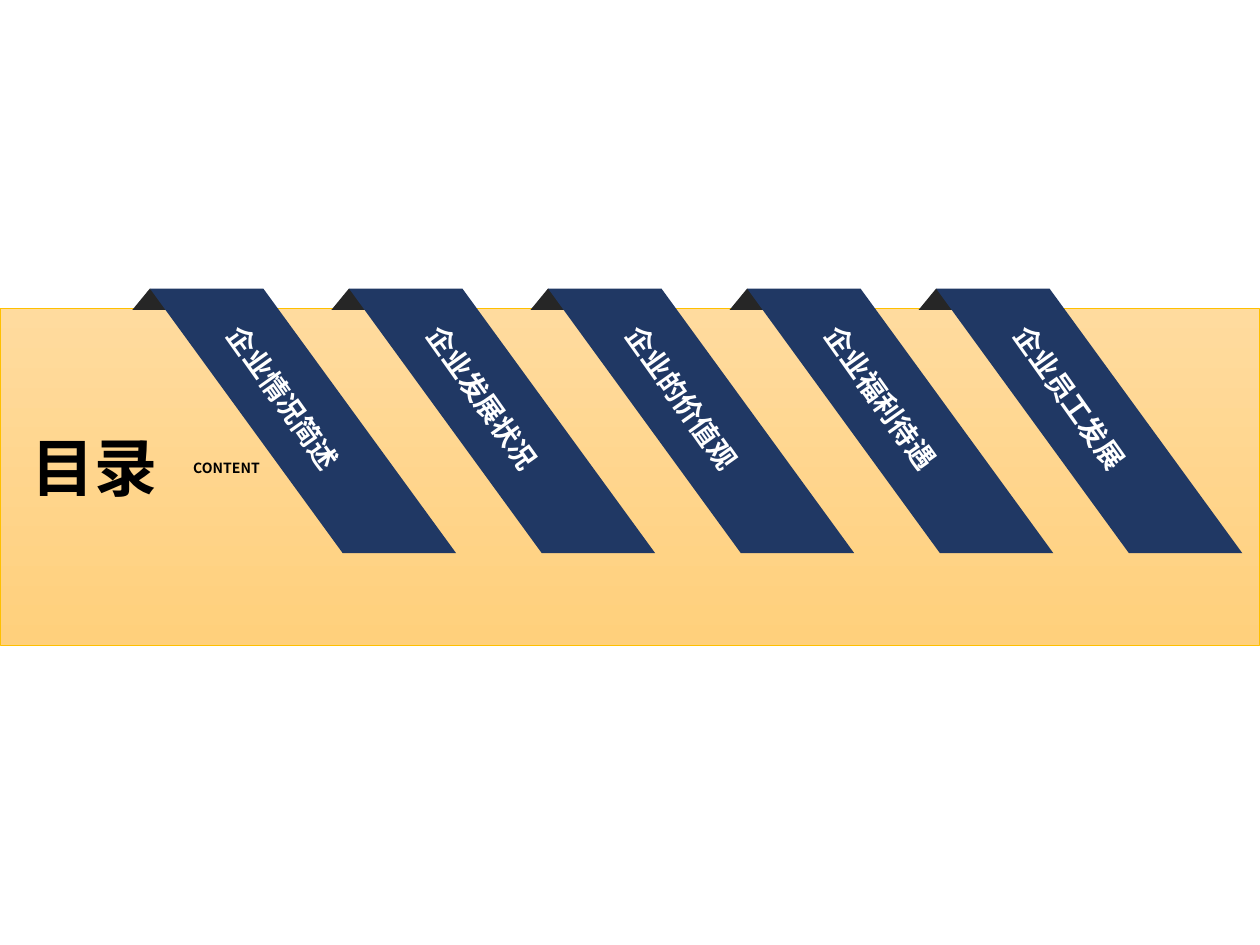
from lxml.etree import SubElement
from pptx import Presentation
from pptx.dml.color import RGBColor
from pptx.enum.shapes import MSO_SHAPE
from pptx.enum.text import MSO_ANCHOR, MSO_AUTO_SIZE, PP_ALIGN
from pptx.oxml.ns import qn
from pptx.util import Inches, Pt

FONT = "Noto Sans CJK SC"
BLACK = RGBColor(0, 0, 0)
WHITE = RGBColor(0xFF, 0xFF, 0xFF)
NAVY = RGBColor(0x20, 0x38, 0x64)
CHARCOAL = RGBColor(0x26, 0x26, 0x26)
GOLD = RGBColor(0xFF, 0xC0, 0x00)
BAND_TOP = RGBColor(0xFF, 0xDB, 0x9E)
BAND_BOTTOM = RGBColor(0xFF, 0xD0, 0x7C)

PAGE_WIDTH, PAGE_HEIGHT = 10, 7.5
BAND = (0, 2.45, PAGE_WIDTH, 2.67)
RIBBON_TOP, RIBBON_WIDTH, RIBBON_HEIGHT = 2.29, 2.57, 2.1
FIRST_RIBBON, RIBBON_STEP = 1.05, 1.58
LAST_RIBBON = 7.29
TOPICS = ["企业情况简述", "企业发展状况", "企业的价值观", "企业福利待遇", "企业员工发展"]


def write_text(shape, text, size, color, wrap=False):
    frame = shape.text_frame
    frame.word_wrap = wrap
    frame.auto_size = MSO_AUTO_SIZE.SHAPE_TO_FIT_TEXT
    frame.vertical_anchor = MSO_ANCHOR.TOP
    para = frame.paragraphs[0]
    para.alignment = PP_ALIGN.LEFT
    span = para.add_run()
    span.text = text
    span.font.name = FONT
    span.font.size = Pt(size)
    span.font.bold = True
    span.font.color.rgb = color
    SubElement(span.font._element, qn("a:ea")).set("typeface", FONT)


def add_polygon(group, points, color):
    corners = [(Inches(x), Inches(y)) for x, y in points]
    builder = group.shapes.build_freeform(*corners[0])
    builder.add_line_segments(corners[1:], close=True)
    shape = builder.convert_to_shape()
    shape.shadow.inherit = False
    shape.fill.solid()
    shape.fill.fore_color.rgb = color
    shape.line.fill.background()


def add_band(page, left, top, width, height):
    band = page.shapes.add_shape(
        MSO_SHAPE.RECTANGLE, *map(Inches, (left, top, width, height)))
    band.shadow.inherit = False
    band.fill.gradient()
    band.fill.gradient_angle = 270
    for stop, color in zip(band.fill.gradient_stops, (BAND_TOP, BAND_BOTTOM)):
        stop.color.rgb = color
    band.line.color.rgb = GOLD
    band.line.width = Pt(0.5)


def add_heading(page, left, top, width, height):
    """Place the title and its small subtitle, in front of the band."""
    title = page.shapes.title
    title.element.getparent().append(title.element)
    title.left, title.top = Inches(left), Inches(top)
    title.width, title.height = Inches(width * 0.63), Inches(height)
    write_text(title, "目录", 36, BLACK, wrap=True)
    subtitle = page.shapes.add_textbox(
        Inches(left + width * 0.63), Inches(top + height * 0.35),
        Inches(width * 0.37), Inches(height * 0.34))
    write_text(subtitle, "CONTENT", 8, BLACK)


def add_ribbon(page, topic, left, top, width, height):
    """Place a slanted ribbon with its folded end and rotated label."""
    group = page.shapes.add_group_shape()
    fold_x, right, bottom = left + 0.14, left + width, top + height
    strip = 0.9
    add_polygon(group, [(fold_x, top), (left, top + 0.17),
                        (left + 0.32, top + 0.17)], CHARCOAL)
    add_polygon(group, [(fold_x, top), (right - strip, bottom),
                        (right, bottom), (fold_x + strip, top)], NAVY)
    label = group.shapes.add_textbox(
        Inches(left + 0.43), Inches(top + 0.69), Inches(1.55), Inches(0.37))
    label.rotation = 54.6
    write_text(label, topic, 16, WHITE)


def main():
    deck = Presentation()
    deck.slide_width, deck.slide_height = Inches(PAGE_WIDTH), Inches(PAGE_HEIGHT)
    page = deck.slides.add_slide(deck.slide_layouts[5])
    add_band(page, *BAND)
    add_heading(page, 0.15, 3.35, 2.04, 0.71)
    for index, topic in enumerate(TOPICS):
        left = min(FIRST_RIBBON + index * RIBBON_STEP, LAST_RIBBON)
        add_ribbon(page, topic, left, RIBBON_TOP, RIBBON_WIDTH, RIBBON_HEIGHT)
    deck.save("out.pptx")


if __name__ == "__main__":
    main()
